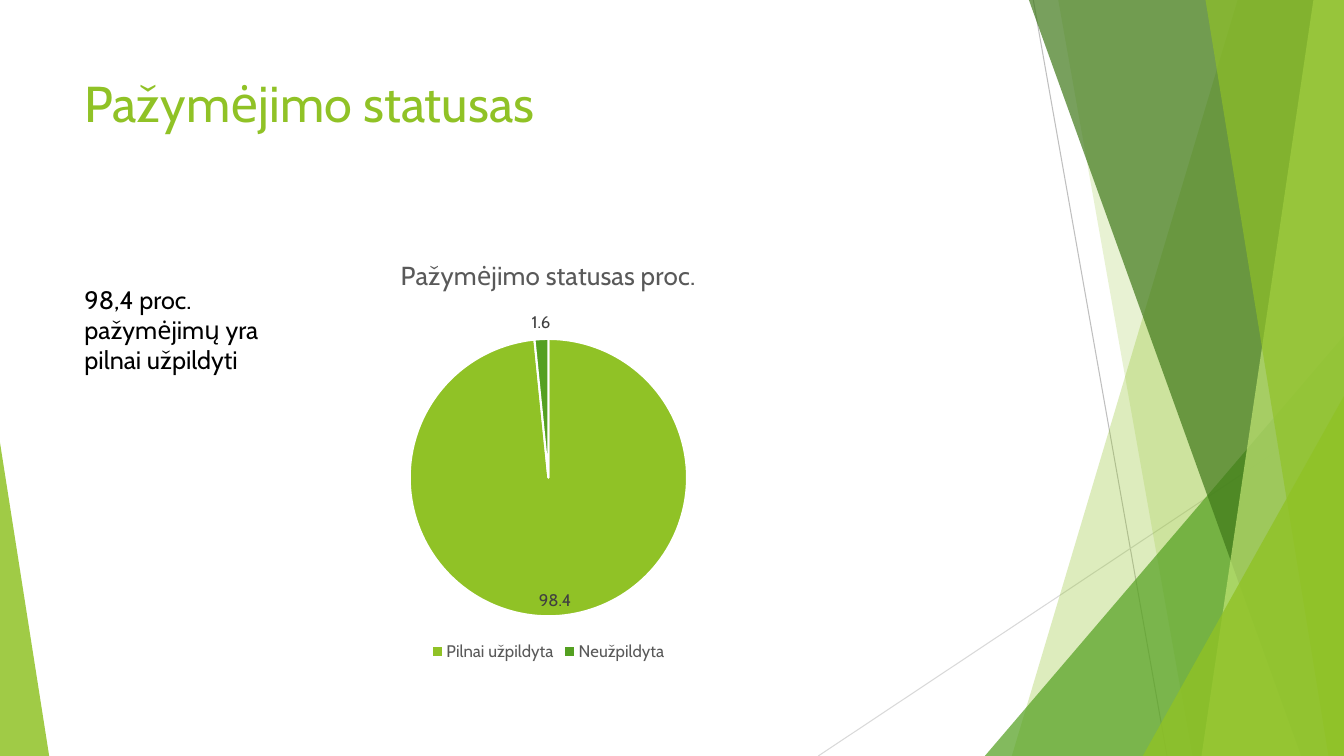
from dataclasses import dataclass

from lxml import etree
from pptx import Presentation
from pptx.chart.data import CategoryChartData
from pptx.dml.color import RGBColor
from pptx.enum.chart import XL_CHART_TYPE, XL_LABEL_POSITION, XL_LEGEND_POSITION
from pptx.enum.shapes import MSO_CONNECTOR, MSO_SHAPE
from pptx.enum.text import MSO_ANCHOR, PP_ALIGN
from pptx.oxml.ns import qn
from pptx.util import Cm, Pt

PIE = XL_CHART_TYPE.PIE
BEST = XL_LABEL_POSITION.BEST_FIT
BOTTOM = XL_LEGEND_POSITION.BOTTOM
LINE = MSO_CONNECTOR.STRAIGHT
TRIANGLE = MSO_SHAPE.ISOSCELES_TRIANGLE
TOP = MSO_ANCHOR.TOP
LEFT = PP_ALIGN.LEFT

WIDE, HIGH = 33.87, 19.05
MARGIN = 1.88


@dataclass(frozen=True)
class Theme:
    font: str = "Cabin"
    lime: str = "90C226"
    green: str = "54A021"
    forest: str = "3F7819"
    pale: str = "C0E474"
    white: str = "FFFFFF"
    black: str = "000000"
    grey: str = "595959"
    dark: str = "404040"
    mist: str = "BFBFBF"
    fog: str = "D9D9D9"
    head: float = 36
    body: float = 18
    caption: float = 18.6
    label: float = 12


THEME = Theme()


def style(font, size, color):
    font.name = THEME.font
    font.size = Pt(size)
    font.bold = False
    font.color.rgb = RGBColor.from_string(color)


def write(frame, text, size, color):
    para = frame.paragraphs[0]
    para.alignment = LEFT
    run = para.add_run()
    run.text = text
    style(run.font, size, color)


def tint(shape, color, alpha):
    """Fill a borderless shape with a colour of alpha percent opacity."""
    shape.shadow.inherit = False
    shape.line.fill.background()
    shape.fill.solid()
    shape.fill.fore_color.rgb = RGBColor.from_string(color)
    node = shape.fill._xPr.find(".//" + qn("a:srgbClr"))
    etree.SubElement(node, qn("a:alpha"), val=str(alpha * 1000))


def add_line(slide, start, end, color):
    line = slide.shapes.add_connector(LINE, *map(Cm, start + end))
    line.line.width = Pt(0.75)
    line.line.color.rgb = RGBColor.from_string(color)
    etree.SubElement(line._element.spPr, qn("a:effectLst"))


def add_band(slide, top, foot, color, alpha):
    """Draw a band from a slanted left edge to the right slide edge."""
    path = slide.shapes.build_freeform(Cm(top), 0, scale=1.0)
    corners = [(WIDE, 0), (WIDE, HIGH), (foot, HIGH)]
    path.add_line_segments([(Cm(x), Cm(y)) for x, y in corners], close=True)
    tint(path.convert_to_shape(), color, alpha)


def add_wedge(slide, left, top, right, peak, color, alpha):
    """Draw a triangle that stands on the bottom slide edge."""
    box = map(Cm, (left, top, right - left, HIGH - top))
    wedge = slide.shapes.add_shape(TRIANGLE, *box)
    wedge.adjustments[0] = peak
    tint(wedge, color, alpha)


def add_decor(slide):
    add_line(slide, (26.04, 0), (29.41, HIGH), THEME.mist)
    add_line(slide, (WIDE, 10.24), (20.62, HIGH), THEME.fog)
    add_band(slide, 31.19, 25.5, THEME.lime, 30)
    add_band(slide, 26.67, 30.05, THEME.lime, 20)
    add_wedge(slide, 24.82, 8.46, WIDE, 1, THEME.green, 72)
    add_band(slide, 25.93, 32.79, THEME.forest, 70)
    add_band(slide, 33.1, 30.28, THEME.pale, 70)
    add_band(slide, 30.38, 33.48, THEME.lime, 65)
    add_wedge(slide, 28.8, 9.98, WIDE, 1, THEME.lime, 80)
    add_wedge(slide, 0, 11.15, 1.24, 0, THEME.lime, 85)


def set_title(slide, text):
    title = slide.shapes.title
    title.left, title.top = Cm(MARGIN), Cm(1.7)
    title.width, title.height = Cm(23.88), Cm(3.66)
    title.text_frame.vertical_anchor = TOP
    write(title.text_frame, text, THEME.head, THEME.lime)


def add_pie(slide, name, parts):
    """Draw a pie; parts maps each category to its value and colour."""
    data = CategoryChartData()
    data.categories = list(parts)
    data.add_series(name, [value for value, _ in parts.values()])
    box = map(Cm, (MARGIN, 6, 23.88, 10.77))
    chart = slide.shapes.add_chart(PIE, *box, data).chart
    style(chart.font, 10, THEME.black)

    chart.has_title = True
    run = chart.chart_title.text_frame.paragraphs[0].add_run()
    run.text = name
    style(run.font, THEME.caption, THEME.grey)
    chart.chart_title.include_in_layout = False

    chart.has_legend = True
    chart.legend.position = BOTTOM
    chart.legend.include_in_layout = False
    style(chart.legend.font, THEME.label, THEME.grey)

    plot = chart.plots[0]
    plot.vary_by_categories = True
    series = plot.series[0]
    for index, (_, color) in enumerate(parts.values()):
        form = series.points[index].format
        form.fill.solid()
        form.fill.fore_color.rgb = RGBColor.from_string(color)
        form.line.width = Pt(1.5)
        form.line.color.rgb = RGBColor.from_string(THEME.white)

    labels = series.data_labels
    labels.show_value = True
    labels.show_percentage = False
    labels.position = BEST
    style(labels.font, THEME.label, THEME.dark)


def add_note(slide, text):
    box = map(Cm, (MARGIN, 7.04, 6.22, 2.57))
    frame = slide.shapes.add_textbox(*box).text_frame
    frame.word_wrap = True
    write(frame, text, THEME.body, THEME.black)


def main():
    deck = Presentation()
    deck.slide_width, deck.slide_height = Cm(WIDE), Cm(HIGH)
    slide = deck.slides.add_slide(deck.slide_layouts[5])
    add_decor(slide)
    set_title(slide, "Pažymėjimo statusas")
    add_pie(slide, "Pažymėjimo statusas proc.", {
        "Pilnai užpildyta": (98.4, THEME.lime),
        "Neužpildyta": (1.6, THEME.green),
    })
    add_note(slide, "98,4 proc. pažymėjimų yra pilnai užpildyti")
    deck.save("out.pptx")


if __name__ == "__main__":
    main()
